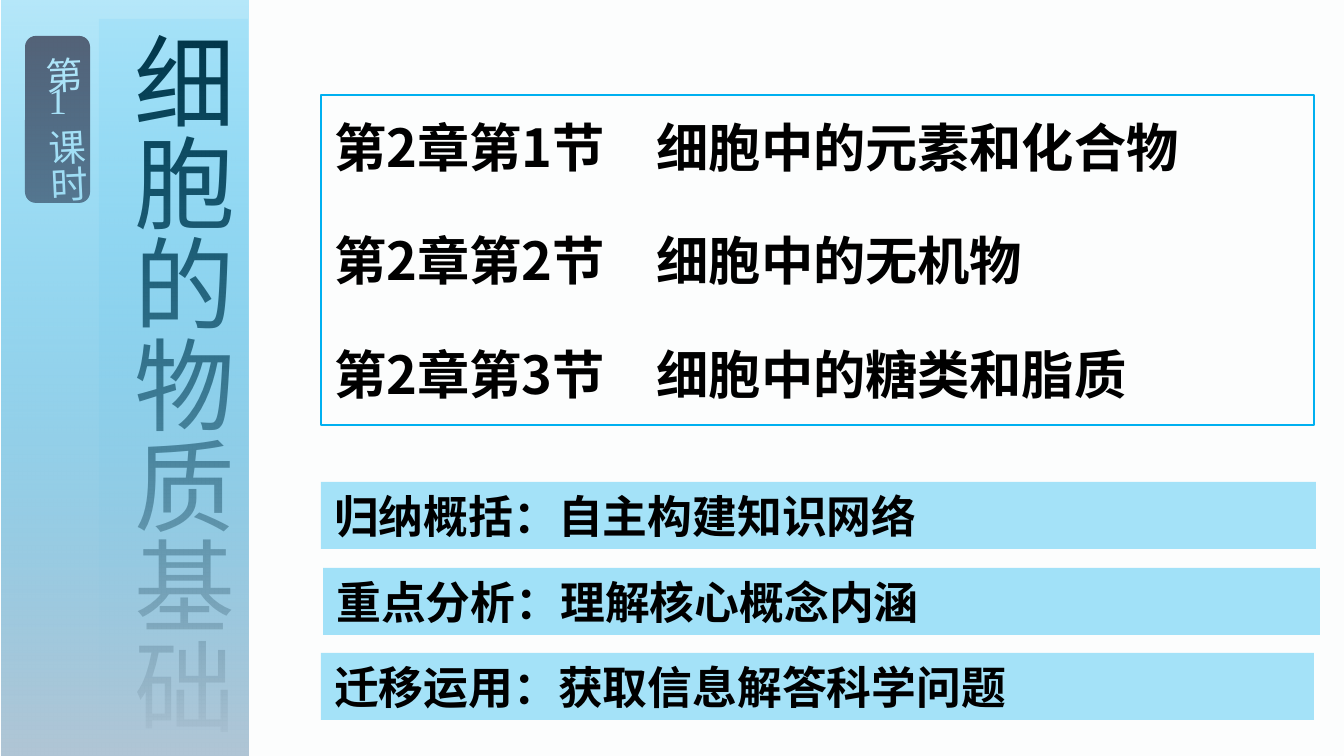
from dataclasses import dataclass

from lxml.etree import SubElement
from pptx import Presentation
from pptx.dml.color import RGBColor
from pptx.enum.shapes import MSO_SHAPE
from pptx.enum.text import MSO_ANCHOR, PP_ALIGN
from pptx.oxml.ns import qn
from pptx.util import Emu, Pt

EMU_PER_PX = 6804
CJK_FONT = "Noto Sans CJK SC"
CYAN = "00B0F0"
BLACK = "000000"
WHITE = "FFFFFF"


@dataclass(frozen=True)
class Area:
    left: int
    top: int
    width: int
    height: int


@dataclass(frozen=True)
class Banner:
    text: str
    area: Area
    opacity: int


SECTIONS = [
    "第2章第1节\u3000细胞中的元素和化合物",
    "第2章第2节\u3000细胞中的无机物",
    "第2章第3节\u3000细胞中的糖类和脂质",
]
BANNERS = [
    Banner("归纳概括：自主构建知识网络", Area(321, 482, 995, 67), 35),
    Banner("重点分析：理解核心概念内涵", Area(323, 568, 997, 67), 36),
    Banner("迁移运用：获取信息解答科学问题", Area(321, 653, 993, 67), 35),
]


def px(length: int) -> Emu:
    return Emu(length * EMU_PER_PX)


def color(value: str) -> RGBColor:
    return RGBColor.from_string(value)


def add_alpha(color_element, opacity: int) -> None:
    SubElement(color_element, qn("a:alpha")).set("val", str(opacity * 1000))


def place(area: Area) -> tuple[Emu, Emu, Emu, Emu]:
    return px(area.left), px(area.top), px(area.width), px(area.height)


def add_panel(page, area: Area, fill: str | None = None, opacity: int = 100,
              line: str | None = None, kind=MSO_SHAPE.RECTANGLE):
    panel = page.shapes.add_shape(kind, *place(area))
    panel.shadow.inherit = False
    if fill:
        panel.fill.solid()
        panel.fill.fore_color.rgb = color(fill)
        if opacity < 100:
            add_alpha(panel.fill._xPr.find(qn("a:solidFill"))[0], opacity)
    else:
        panel.fill.background()
    if line:
        panel.line.color.rgb = color(line)
        panel.line.width = Pt(0.75)
    else:
        panel.line.fill.background()
    return panel


def write_text(box, *lines: str, size: int, font: str, ink: str = BLACK,
               bold: bool = False, anchor=MSO_ANCHOR.TOP, align=PP_ALIGN.LEFT,
               vertical: bool = False, wrap: bool = True, gap: int = 0) -> None:
    frame = box.text_frame
    frame.word_wrap = wrap
    frame.vertical_anchor = anchor
    if vertical:
        frame._txBody.bodyPr.set("vert", "eaVert")
    for index, line in enumerate(lines):
        para = frame.add_paragraph() if index else frame.paragraphs[0]
        para.alignment = align
        if index:
            para.space_before = Pt(gap)
        span = para.add_run()
        span.text = line
        span.font.size = Pt(size)
        span.font.name = font
        span.font.bold = bold
        span.font.color.rgb = color(ink)
        if font == CJK_FONT:
            SubElement(span._r.get_or_add_rPr(), qn("a:ea")).set("typeface", font)


def add_label(page, text: str, area: Area, font: str = "Arial",
              rotation: float = 0, vertical: bool = False) -> None:
    box = page.shapes.add_textbox(*place(area))
    box.rotation = rotation
    write_text(box, text, size=20, font=font, ink=WHITE, vertical=vertical, wrap=False)


def add_fading_veil(page, area: Area) -> None:
    veil = add_panel(page, area)
    veil.fill.gradient()
    veil.fill.gradient_angle = 270
    start, end = veil.fill.gradient_stops
    for stop, value, position in ((start, CYAN, 0), (end, "B0C5D5", 1)):
        stop.color.rgb = color(value)
        stop.position = position
    add_alpha(start._gs[0], 28)


def main() -> None:
    deck = Presentation()
    deck.slide_width, deck.slide_height = px(1344), px(756)
    page = deck.slides.add_slide(deck.slide_layouts[6])
    page.background.fill.solid()
    page.background.fill.fore_color.rgb = color("FCFDFD")

    contents = add_panel(page, Area(321, 95, 993, 330), line=CYAN)
    write_text(contents, *SECTIONS, size=28, font=CJK_FONT, bold=True,
               anchor=MSO_ANCHOR.MIDDLE, gap=27)
    for banner in BANNERS:
        panel = add_panel(page, banner.area, CYAN, banner.opacity)
        write_text(panel, banner.text, size=24, font=CJK_FONT, bold=True,
                   anchor=MSO_ANCHOR.MIDDLE)

    add_panel(page, Area(25, 36, 65, 167), "763F42", kind=MSO_SHAPE.ROUNDED_RECTANGLE)
    add_label(page, "第", Area(20, 44, 72, 52), rotation=357.3, vertical=True)
    add_label(page, "课时", Area(24, 116, 72, 88), rotation=357.3, vertical=True)
    add_label(page, "1", Area(35, 71, 46, 59), font="Times New Roman")

    title = add_panel(page, Area(99, 19, 149, 737), CYAN, 7)
    write_text(title, "细胞的物质基础", size=54, font="Arial", vertical=True)
    add_fading_veil(page, Area(1, 0, 248, 756))

    deck.save("out.pptx")


if __name__ == "__main__":
    main()
